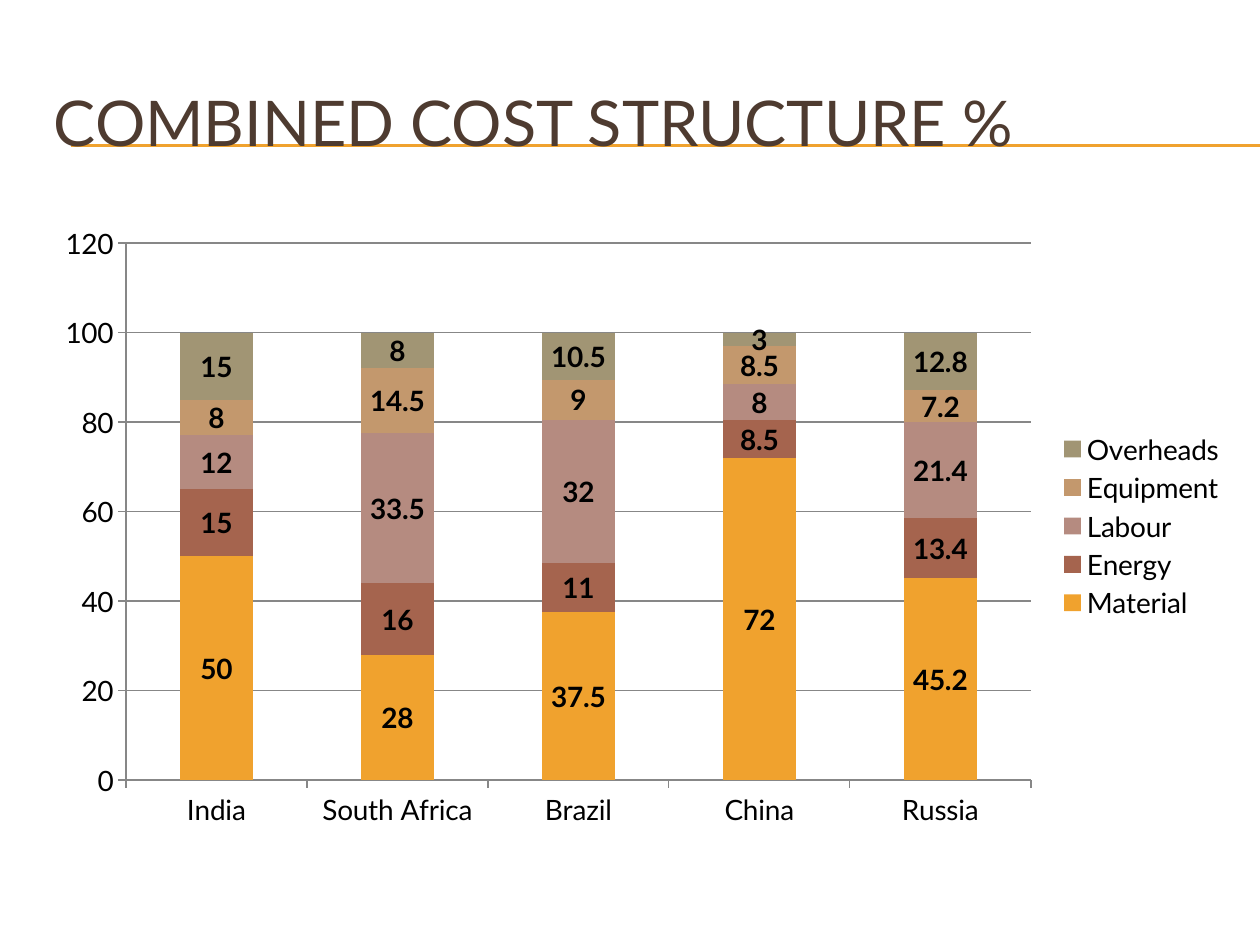
from lxml import etree
from pptx import Presentation
from pptx.chart.data import CategoryChartData
from pptx.dml.color import RGBColor
from pptx.enum import chart as charts, shapes, text
from pptx.oxml.ns import qn
from pptx.util import Inches, Pt

FONT = "Lato"
COLORS = {
    "title": "4E3B30",
    "rule": "F0A22E",
    "text": "000000",
    "grid": "878787",
    "Material": "F0A22E",
    "Energy": "A5644E",
    "Labour": "B58B80",
    "Equipment": "C3986D",
    "Overheads": "A19574",
}
COUNTRIES = ["India", "South Africa", "Brazil", "China", "Russia"]
COSTS = {
    "Material": [50, 28, 37.5, 72, 45.2],
    "Energy": [15, 16, 11, 8.5, 13.4],
    "Labour": [12, 33.5, 32, 8, 21.4],
    "Equipment": [8, 14.5, 9, 8.5, 7.2],
    "Overheads": [15, 8, 10.5, 3, 12.8],
}

presentation = Presentation()
presentation.slide_width, presentation.slide_height = Inches(10), Inches(7.5)
slide = presentation.slides.add_slide(presentation.slide_layouts[6])

# Content column shared by the title and the chart
left, width = Inches(0.33), Inches(9.5)


def add_text(content, top, height, size, color):
    """Add one line of text, centred vertically in the content column."""
    box = slide.shapes.add_textbox(left, top, width, height)
    frame = box.text_frame
    frame.word_wrap = True
    frame.vertical_anchor = text.MSO_ANCHOR.MIDDLE
    run = frame.paragraphs[0].add_run()
    run.text = content
    run.font.name, run.font.size = FONT, Pt(size)
    run.font.color.rgb = RGBColor.from_string(COLORS[color])


# Double rule under the title, running to the right edge
for y in (1.15, 1.16):
    rule = slide.shapes.add_connector(
        shapes.MSO_CONNECTOR.STRAIGHT,
        Inches(0.56), Inches(y), presentation.slide_width, Inches(y))
    rule.line.color.rgb = RGBColor.from_string(COLORS["rule"])
    rule.line.width = Pt(0.75)
    etree.SubElement(rule.element.spPr, qn("a:effectLst"))

# Title
add_text("COMBINED COST STRUCTURE %", top=Inches(0.5), height=Inches(0.92),
         size=36, color="title")

# Stacked column chart
data = CategoryChartData()
data.categories = COUNTRIES
for name, values in COSTS.items():
    data.add_series(name, values)
chart = slide.shapes.add_chart(
    charts.XL_CHART_TYPE.COLUMN_STACKED,
    left, Inches(1.7), width, Inches(4.95), data).chart
chart.has_title = False
chart.font.name, chart.font.size = FONT, Pt(16)
chart.font.color.rgb = RGBColor.from_string(COLORS["text"])

# Legend
chart.has_legend = True
chart.legend.position = charts.XL_LEGEND_POSITION.RIGHT
chart.legend.include_in_layout = False

# Axes and gridlines
value_axis, category_axis = chart.value_axis, chart.category_axis
value_axis.minimum_scale, value_axis.maximum_scale = 0, 120
value_axis.major_unit = 20
value_axis.has_major_gridlines = True
for axis in (value_axis, category_axis):
    axis.major_tick_mark = charts.XL_TICK_MARK.OUTSIDE
for line in (value_axis.format.line, category_axis.format.line,
             value_axis.major_gridlines.format.line):
    line.color.rgb = RGBColor.from_string(COLORS["grid"])
    line.width = Pt(0.75)

# Columns and their bold value labels
plot = chart.plots[0]
plot.gap_width, plot.overlap = 150, 100
plot.vary_by_categories = False
for series in plot.series:
    series.format.fill.solid()
    series.format.fill.fore_color.rgb = RGBColor.from_string(COLORS[series.name])
    labels = series.data_labels
    labels.show_value = True
    labels.font.name, labels.font.size = FONT, Pt(16)
    labels.font.bold = True
    labels.font.color.rgb = RGBColor.from_string(COLORS["text"])

presentation.save("out.pptx")
